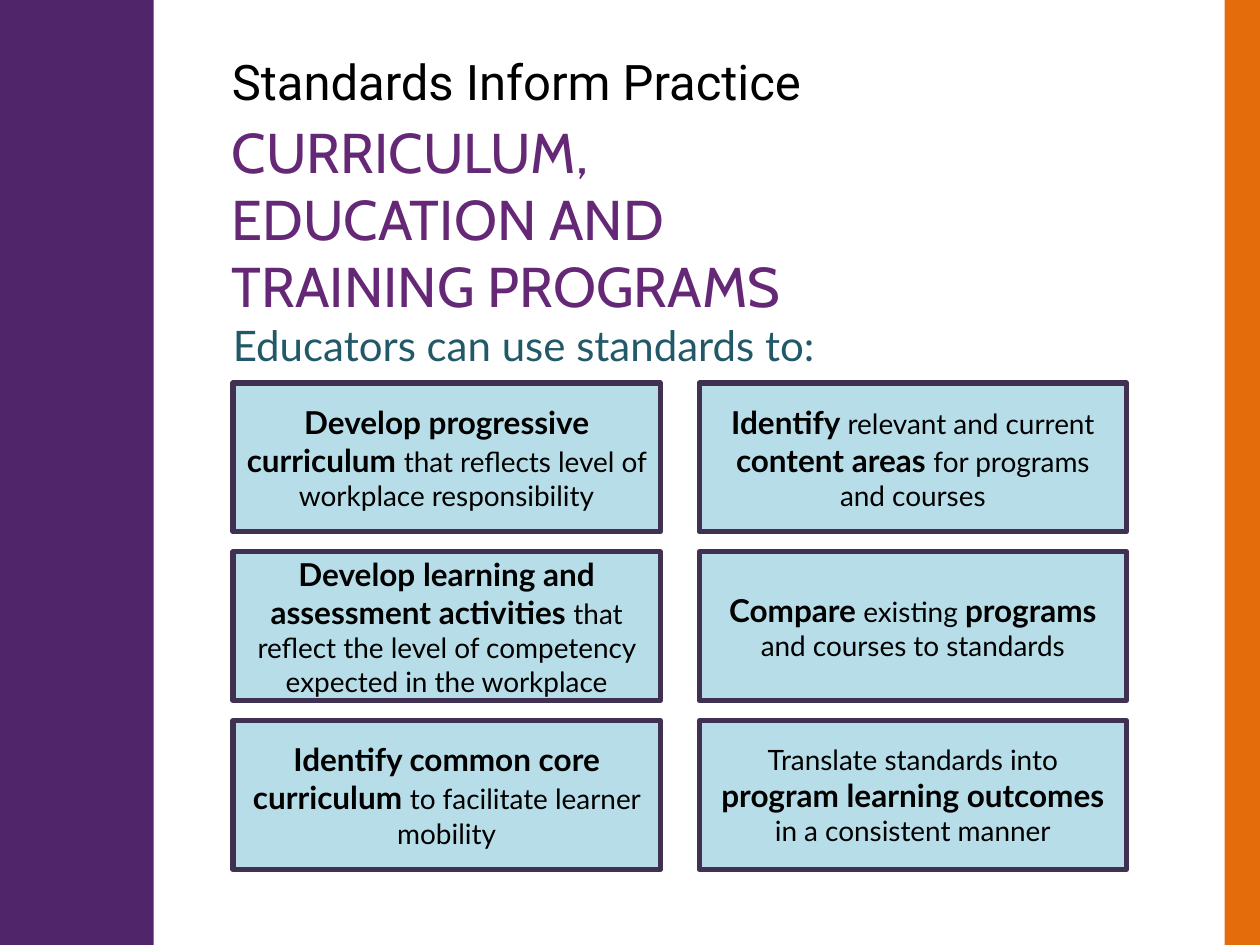
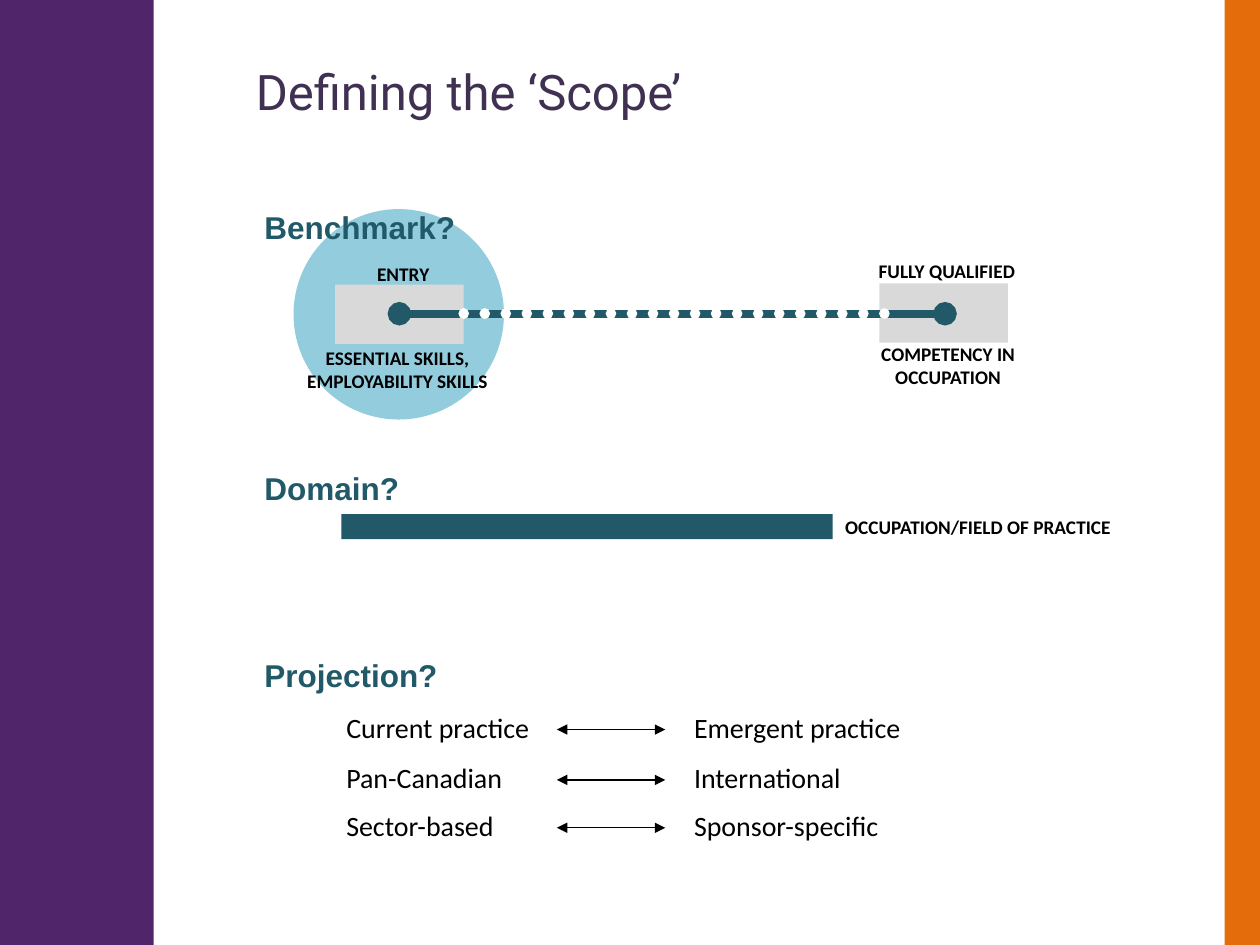
from lxml.etree import SubElement
from pptx import Presentation
from pptx.dml.color import RGBColor
from pptx.enum.dml import MSO_LINE
from pptx.enum.shapes import MSO_CONNECTOR, MSO_SHAPE
from pptx.enum.text import MSO_ANCHOR, PP_ALIGN
from pptx.oxml.ns import qn
from pptx.util import Inches, Pt

PURPLE = RGBColor(0x51, 0x25, 0x69)
HEADING_PURPLE = RGBColor(0x65, 0x28, 0x76)
DARK_PURPLE = RGBColor(0x40, 0x31, 0x52)
ORANGE = RGBColor(0xE4, 0x6C, 0x0A)
TEAL = RGBColor(0x21, 0x59, 0x68)
SKY = RGBColor(0x93, 0xCD, 0xDD)
PALE_BLUE = RGBColor(0xB7, 0xDE, 0xE8)
GREY = RGBColor(0xD9, 0xD9, 0xD9)
BLACK = RGBColor(0, 0, 0)
WHITE = RGBColor(0xFF, 0xFF, 0xFF)

TITLE_ONLY = 5


def write(frame, text, size=16, font="Calibri", color=BLACK, bold=False,
          bold_size=None, align=PP_ALIGN.LEFT, anchor=MSO_ANCHOR.TOP):
    """Fill a text frame; parts between ** marks are bold, in bold_size."""
    frame.word_wrap = True
    frame.vertical_anchor = anchor
    paragraph = frame.paragraphs[0]
    paragraph.alignment = align
    for index, part in enumerate(text.split("**")):
        if not part:
            continue
        marked = index % 2 == 1
        run = paragraph.add_run()
        run.text = part
        run.font.name = font
        run.font.size = Pt(bold_size if marked and bold_size else size)
        run.font.bold = bold or marked
        run.font.color.rgb = color


class Deck:
    def __init__(self):
        self.prs = Presentation()
        self.prs.slide_width = Inches(10)
        self.prs.slide_height = Inches(7.5)
        self.slide = None

    def new_slide(self, title, left, top, width, color):
        """Add a slide with its title and the two side bands."""
        self.slide = self.prs.slides.add_slide(self.prs.slide_layouts[TITLE_ONLY])
        heading = self.slide.shapes.title
        heading.left, heading.top = Inches(left), Inches(top)
        heading.width, heading.height = Inches(width), Inches(0.57)
        write(heading.text_frame, title, size=28, font="Roboto", color=color)
        self.shape(0, 0, 1.22, 7.5, PURPLE)
        self.shape(9.72, 0, 0.28, 7.5, ORANGE)

    def shape(self, left, top, width, height, fill, kind=MSO_SHAPE.RECTANGLE,
              border=None):
        shape = self.slide.shapes.add_shape(
            kind, Inches(left), Inches(top), Inches(width), Inches(height))
        shape.shadow.inherit = False
        shape.fill.solid()
        shape.fill.fore_color.rgb = fill
        if border is None:
            shape.line.fill.background()
        else:
            shape.line.color.rgb = border
            shape.line.width = Pt(3)
        return shape

    def text(self, text, left, top, width, height, **style):
        box = self.slide.shapes.add_textbox(
            Inches(left), Inches(top), Inches(width), Inches(height))
        write(box.text_frame, text, **style)

    def line(self, start, end, y, color, weight, ends=None, dotted=False):
        """Draw a horizontal line, with the same mark at both ends."""
        connector = self.slide.shapes.add_connector(
            MSO_CONNECTOR.STRAIGHT, Inches(start), Inches(y), Inches(end), Inches(y))
        connector.line.color.rgb = color
        connector.line.width = Pt(weight)
        properties = connector._element.spPr
        outline = properties.find(qn("a:ln"))
        if dotted:
            connector.line.dash_style = MSO_LINE.ROUND_DOT
            outline.set("cap", "rnd")
        if ends:
            for tag in ("a:headEnd", "a:tailEnd"):
                SubElement(outline, qn(tag), type=ends)
        SubElement(properties, qn("a:effectLst"))


def build_practice(deck):
    deck.new_slide("Standards Inform Practice", 1.74, 0.36, 7.75, BLACK)
    deck.text("CURRICULUM, EDUCATION AND TRAINING PROGRAMS", 1.74, 0.88, 4.88, 1.18,
              size=32, font="Cabin", color=HEADING_PURPLE)
    deck.text("Educators can use standards to:", 1.75, 2.49, 5.2, 0.5,
              size=24, font="Lato", color=TEAL)
    uses = [
        "**Develop progressive curriculum **that reflects level of workplace responsibility",
        "**Identify** relevant and current **content areas **for programs and courses",
        "**Develop learning and assessment activities **that reflect the level of "
        "competency expected in the workplace",
        "**Compare** existing **programs** and courses to standards",
        "**Identify common core curriculum **to facilitate learner mobility",
        "Translate standards into **program learning outcomes** in a consistent manner",
    ]
    for index, use in enumerate(uses):
        row, column = divmod(index, 2)
        card = deck.shape(1.85 + 3.7 * column, 3.04 + 1.34 * row, 3.39, 1.18,
                          PALE_BLUE, border=DARK_PURPLE)
        write(card.text_frame, use, font="Lato", bold_size=18,
              align=PP_ALIGN.CENTER, anchor=MSO_ANCHOR.MIDDLE)


def build_scope(deck):
    deck.new_slide("Defining the ‘Scope’", 1.93, 0.44, 5.08, DARK_PURPLE)

    deck.shape(2.33, 1.66, 1.67, 1.67, SKY, kind=MSO_SHAPE.OVAL)
    deck.shape(6.98, 2.25, 1.02, 0.47, GREY)
    deck.shape(2.66, 2.26, 1.02, 0.47, GREY)
    deck.line(3.17, 7.5, 2.49, TEAL, 4.5, ends="oval")
    deck.line(3.68, 7.02, 2.49, WHITE, 6, dotted=True)
    label = dict(size=11, bold=True)
    for caption, *place in [
        ("ENTRY", 2.69, 2.03, 1.02, 0.29),
        ("FULLY QUALIFIED", 6.59, 2.01, 1.85, 0.29),
        ("ESSENTIAL SKILLS, EMPLOYABILITY SKILLS", 2.17, 2.7, 1.97, 0.47),
        ("COMPETENCY IN OCCUPATION", 6.7, 2.67, 1.65, 0.66),
    ]:
        deck.text(caption, *place, align=PP_ALIGN.CENTER, **label)

    deck.shape(2.71, 4.08, 3.9, 0.2, TEAL)
    deck.text("OCCUPATION/FIELD OF PRACTICE", 6.61, 4.04, 2.64, 0.29, **label)

    for question, top in [("Benchmark?", 1.6), ("Domain?", 3.67), ("Projection?", 5.16)]:
        deck.text(question, 2, top, 6.42, 0.4, size=18, font="Arial",
                  color=TEAL, bold=True)

    for near, far, top in [
        ("Current practice", "Emergent practice", 5.59),
        ("Pan-Canadian", "International", 5.99),
        ("Sector-based", "Sponsor-specific", 6.37),
    ]:
        deck.text(near, 2.65, top, 2.28, 0.37)
        deck.text(far, 5.41, top, 2.28, 0.37)
        deck.line(4.42, 5.28, top + 0.2, BLACK, 0.75, ends="triangle")


def main():
    deck = Deck()
    build_practice(deck)
    build_scope(deck)
    deck.prs.save("out.pptx")


if __name__ == "__main__":
    main()
